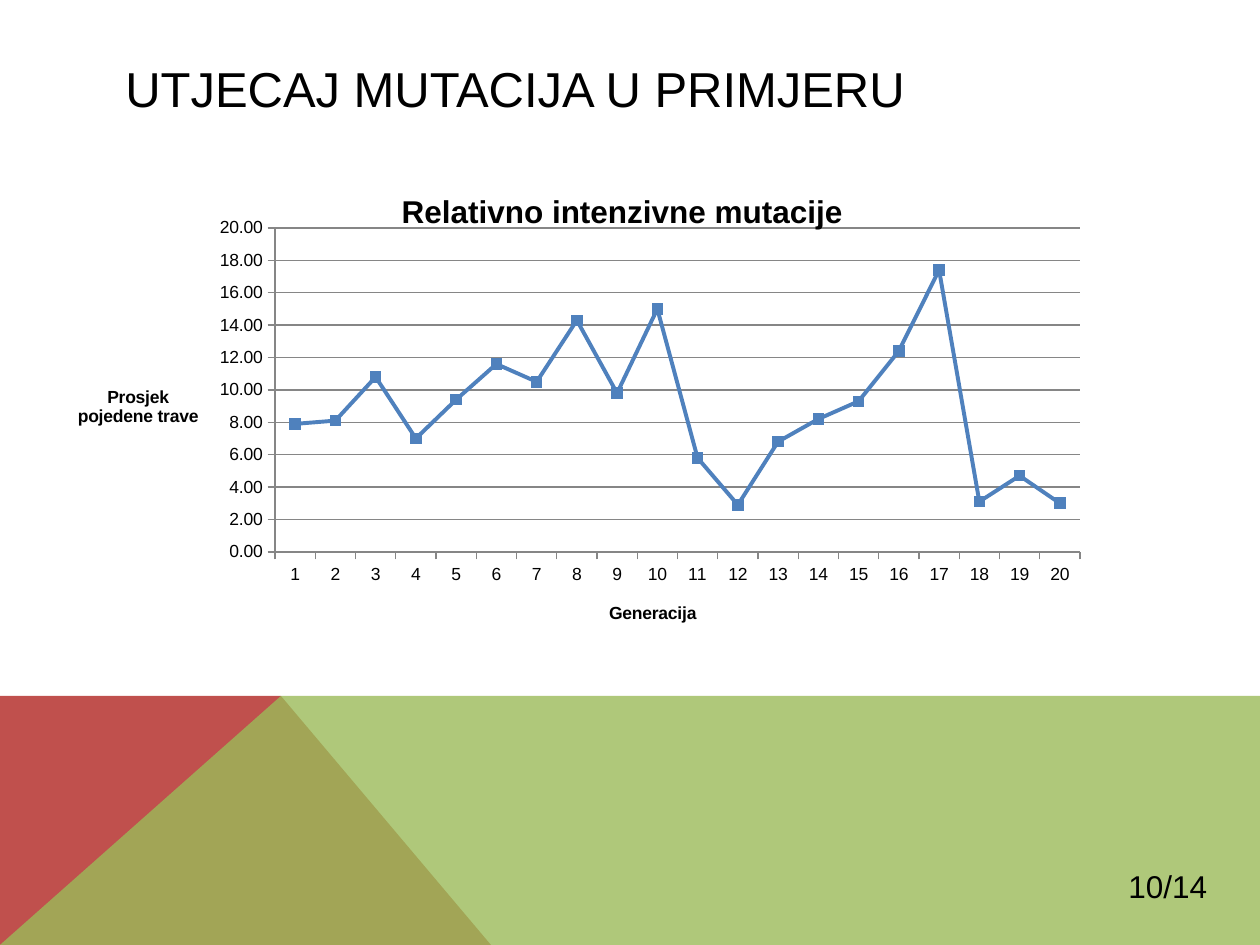
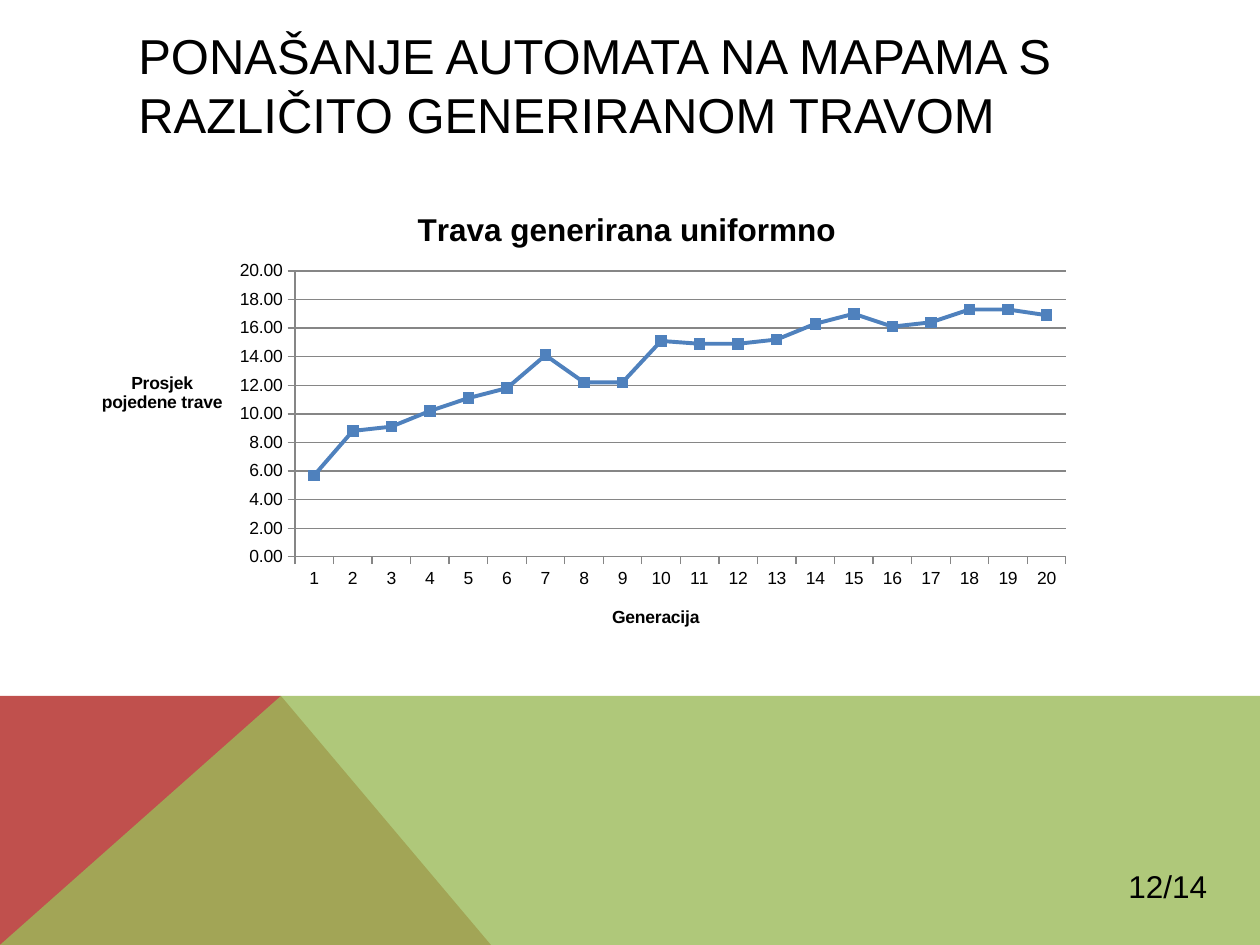
from dataclasses import dataclass
from typing import Any, Optional

import pptx
import pptx.chart.data
import pptx.dml.color
import pptx.enum.chart
import pptx.enum.text
import pptx.oxml
import pptx.oxml.ns
import pptx.util
from lxml import etree

PX = 914400 / 126
FONT = "Arial"
COLOURS = {
    "text": "000000",
    "red": "C0504D",
    "green": "9BBB59",
    "line": "4F81BD",
    "grid": "868686",
}
GENERATIONS = [str(number) for number in range(1, 21)]
TOTAL_SLIDES = 14


@dataclass(frozen=True)
class Box:
    left: int
    top: int
    width: int = 0
    height: int = 0

    def emu(self) -> list[int]:
        return [px(v) for v in (self.left, self.top, self.width, self.height)]


@dataclass(frozen=True)
class Band:
    colour: str
    corners: tuple[tuple[int, int], ...]
    opacity: Optional[int] = None


@dataclass(frozen=True)
class GrassSlide:
    number: int
    heading: str
    heading_box: Box
    heading_bottom_inset: int
    chart_title: str
    chart_box: Box
    plot_box: Box
    chart_title_at: Box
    average_title_at: Box
    generation_title_at: Box
    value_format: str
    averages: tuple[float, ...]


BANDS = (
    Band("red", ((0, 945), (0, 696), (281, 696), (491, 945))),
    Band("green", ((0, 945), (281, 696), (1260, 696), (1260, 945)), 80),
)
PAGE_NUMBER_BOX = Box(1116, 861, 118, 50)

SLIDES = (
    GrassSlide(
        number=10,
        heading="UTJECAJ MUTACIJA U PRIMJERU",
        heading_box=Box(113, 50, 1036, 76),
        heading_bottom_inset=6,
        chart_title="Relativno intenzivne mutacije",
        chart_box=Box(44, 175, 1081, 476),
        plot_box=Box(275, 228, 805, 324),
        chart_title_at=Box(396, 185),
        average_title_at=Box(74, 381),
        generation_title_at=Box(606, 598),
        value_format="#,##0.00",
        averages=(7.9, 8.1, 10.8, 7, 9.4, 11.6, 10.5, 14.3, 9.8, 15,
                  5.8, 2.9, 6.8, 8.2, 9.3, 12.4, 17.4, 3.1, 4.7, 3),
    ),
    GrassSlide(
        number=12,
        heading="PONAŠANJE AUTOMATA NA MAPAMA S RAZLIČITO GENERIRANOM TRAVOM",
        heading_box=Box(126, 64, 1036, 76),
        heading_bottom_inset=41,
        chart_title="Trava generirana uniformno",
        chart_box=Box(64, 183, 1022, 466),
        plot_box=Box(295, 271, 771, 286),
        chart_title_at=Box(412, 203),
        average_title_at=Box(98, 367),
        generation_title_at=Box(609, 602),
        value_format="0.00",
        averages=(5.7, 8.8, 9.1, 10.2, 11.1, 11.8, 14.1, 12.2, 12.2, 15.1,
                  14.9, 14.9, 15.2, 16.3, 17, 16.1, 16.4, 17.3, 17.3, 16.9),
    ),
)


def px(length: int) -> int:
    return round(length * PX)


def rgb(name: str) -> pptx.dml.color.RGBColor:
    return pptx.dml.color.RGBColor.from_string(COLOURS[name])


def apply(target: Any, formats: dict[str, Any]) -> None:
    for attribute, value in formats.items():
        setattr(target, attribute, value)


def style_font(font: Any, size: int, bold: bool = False) -> None:
    apply(font, {"name": FONT, "size": pptx.util.Pt(size), "bold": bold})
    font.color.rgb = rgb("text")


def style_line(line: Any, colour: str, width: float) -> None:
    line.color.rgb = rgb(colour)
    line.width = pptx.util.Pt(width)


def add_band(slide: Any, band: Band) -> None:
    start, *others = band.corners
    outline = slide.shapes.build_freeform(*start, scale=PX)
    outline.add_line_segments(others, close=True)
    area = outline.convert_to_shape()
    area.shadow.inherit = False
    area.fill.solid()
    area.fill.fore_color.rgb = rgb(band.colour)
    area.line.fill.background()
    if band.opacity is not None:
        tint = area.element.spPr.find(".//" + pptx.oxml.ns.qn("a:srgbClr"))
        alpha = etree.SubElement(tint, pptx.oxml.ns.qn("a:alpha"))
        alpha.set("val", str(band.opacity * 1000))


def add_text(slide: Any, text: str, box: Box, size: int,
             formats: dict[str, Any]) -> None:
    frame = slide.shapes.add_textbox(*box.emu()).text_frame
    apply(frame, {"word_wrap": True, **formats})
    run = frame.paragraphs[0].add_run()
    run.text = text
    style_font(run.font, size)


def place(part: Any, index: int, box: Box, chart_box: Box) -> None:
    for old in part.xpath("c:layout"):
        part.remove(old)
    values: dict[str, Any] = {}
    if box.width:
        values["layoutTarget"] = "inner"
    values.update({
        "xMode": "edge",
        "yMode": "edge",
        "x": round((box.left - chart_box.left) / chart_box.width, 4),
        "y": round((box.top - chart_box.top) / chart_box.height, 4),
    })
    if box.width:
        values["w"] = round(box.width / chart_box.width, 4)
        values["h"] = round(box.height / chart_box.height, 4)
    layout = pptx.oxml.parse_xml(f"<c:layout {pptx.oxml.ns.nsdecls('c')}/>")
    manual = etree.SubElement(layout, pptx.oxml.ns.qn("c:manualLayout"))
    for tag, value in values.items():
        etree.SubElement(manual, pptx.oxml.ns.qn(f"c:{tag}")).set("val", str(value))
    part.insert(index, layout)


def write_title(title: Any, text: str, size: int, at: Box, chart_box: Box) -> None:
    title.text_frame.text = text
    for paragraph in title.text_frame.paragraphs:
        for run in paragraph.runs:
            style_font(run.font, size, bold=True)
    body = title.element.find(".//" + pptx.oxml.ns.qn("a:bodyPr"))
    for key, value in {"rot": "0", "vert": "horz"}.items():
        body.set(key, value)
    place(title.element, 1, at, chart_box)


def add_grass_chart(slide: Any, content: GrassSlide) -> None:
    data = pptx.chart.data.CategoryChartData()
    data.categories = GENERATIONS
    data.add_series("Series 1", content.averages)
    chart = slide.shapes.add_chart(
        pptx.enum.chart.XL_CHART_TYPE.LINE_MARKERS, *content.chart_box.emu(), data
    ).chart
    style_font(chart.font, 10)
    apply(chart, {"has_legend": False, "has_title": True})
    chart.plots[0].vary_by_categories = False

    generation, average = chart.category_axis, chart.value_axis
    outside = pptx.enum.chart.XL_TICK_MARK.OUTSIDE
    for axis in (generation, average):
        apply(axis, {"major_tick_mark": outside, "has_title": True})
        style_line(axis.format.line, "grid", 0.75)
    apply(average, {"minimum_scale": 0, "maximum_scale": 20, "major_unit": 2,
                    "has_major_gridlines": True})
    style_line(average.major_gridlines.format.line, "grid", 0.75)
    apply(average.tick_labels, {"number_format": content.value_format,
                                "number_format_is_linked": False})

    titles = (
        (chart.chart_title, content.chart_title, 18, content.chart_title_at),
        (generation.axis_title, "Generacija", 10, content.generation_title_at),
        (average.axis_title, "Prosjek\npojedene trave", 10, content.average_title_at),
    )
    for title, text, size, at in titles:
        write_title(title, text, size, at, content.chart_box)
    plot_area = chart.element.xpath("c:chart/c:plotArea")[0]
    place(plot_area, 0, content.plot_box, content.chart_box)

    series = chart.plots[0].series[0]
    series.smooth = False
    style_line(series.format.line, "line", 2.25)
    apply(series.marker, {"style": pptx.enum.chart.XL_MARKER_STYLE.SQUARE, "size": 6})
    series.marker.format.fill.solid()
    series.marker.format.fill.fore_color.rgb = rgb("line")
    style_line(series.marker.format.line, "line", 0.75)


def add_grass_slide(deck: Any, content: GrassSlide) -> None:
    slide = deck.slides.add_slide(deck.slide_layouts[6])
    for band in BANDS:
        add_band(slide, band)
    add_text(slide, content.heading, content.heading_box, 28, {
        "vertical_anchor": pptx.enum.text.MSO_ANCHOR.MIDDLE,
        "margin_bottom": px(content.heading_bottom_inset),
    })
    add_grass_chart(slide, content)
    add_text(slide, f"{content.number}/{TOTAL_SLIDES}", PAGE_NUMBER_BOX, 18, {
        "auto_size": pptx.enum.text.MSO_AUTO_SIZE.SHAPE_TO_FIT_TEXT,
    })


def main() -> None:
    deck = pptx.Presentation()
    apply(deck, {"slide_width": px(1260), "slide_height": px(945)})
    for content in SLIDES:
        add_grass_slide(deck, content)
    deck.save("out.pptx")


if __name__ == "__main__":
    main()
